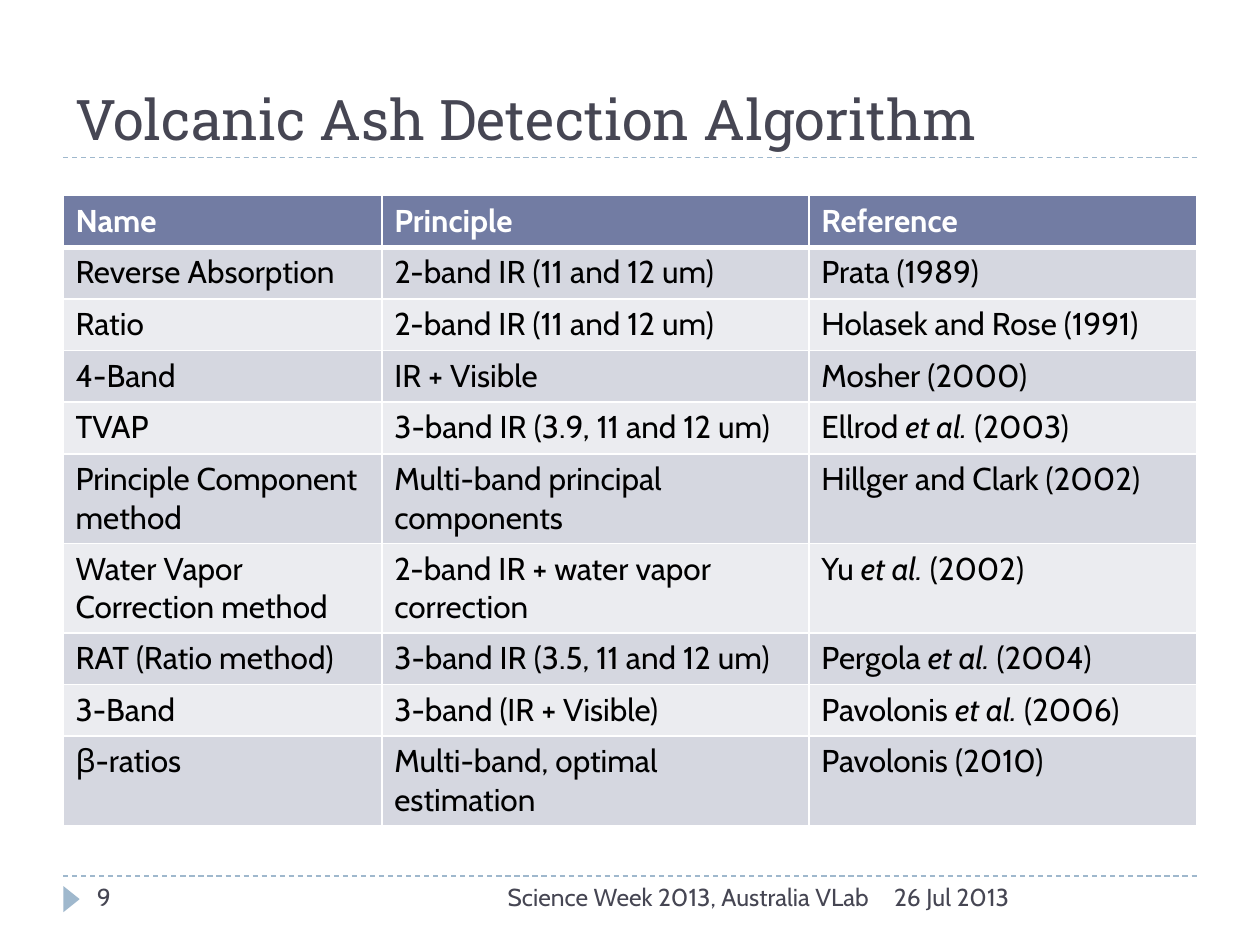
from dataclasses import dataclass

from lxml import etree
from pptx import Presentation
from pptx import util as u
from pptx.dml.color import RGBColor
from pptx.enum import dml, shapes, text
from pptx.oxml.ns import qn


@dataclass(frozen=True)
class Theme:
    heading_font: str = "Roboto Slab"
    body_font: str = "Cabin"
    ink: str = "464653"
    cell_ink: str = "000000"
    white: str = "FFFFFF"
    accent: str = "9FB8CD"
    header: str = "727CA3"
    bands: tuple = ("D5D7E0", "EBECF0")
    title_size: int = 32
    cell_size: int = 18
    footer_size: int = 14
    rule_width: float = 0.75
    grid_width: int = 1
    header_rule_width: int = 3


@dataclass(frozen=True)
class Box:
    left: float
    top: float
    width: float
    height: float

    def region(self, left, top, width, height):
        return Box(self.left + left * self.width, self.top + top * self.height,
                   width * self.width, height * self.height)

    def emu(self):
        return [u.Inches(n) for n in (self.left, self.top, self.width, self.height)]


THEME = Theme()
SLIDE = Box(0, 0, 10, 7.5)
MARGIN, CONTENT_WIDTH = 0.05, 0.9
COLUMN_WIDTHS = (2.53, 3.39, 3.08)
ROW_HEIGHT = 0.41
ET_AL = "et al."

ALGORITHMS = [
    ("Name", "Principle", "Reference"),
    ("Reverse Absorption", "2-band IR (11 and 12 um)", "Prata (1989)"),
    ("Ratio", "2-band IR (11 and 12 um)", "Holasek and Rose (1991)"),
    ("4-Band", "IR + Visible", "Mosher (2000)"),
    ("TVAP", "3-band IR (3.9, 11 and 12 um)", "Ellrod et al. (2003)"),
    ("Principle Component method", "Multi-band principal components",
     "Hillger and Clark (2002)"),
    ("Water Vapor Correction method", "2-band IR + water vapor correction",
     "Yu et al. (2002)"),
    ("RAT (Ratio method)", "3-band IR (3.5, 11 and 12 um)", "Pergola et al. (2004)"),
    ("3-Band", "3-band (IR + Visible)", "Pavolonis et al. (2006)"),
    ("β-ratios", "Multi-band, optimal estimation", "Pavolonis (2010)"),
]


def rgb(color):
    return RGBColor.from_string(color)


def set_font(paragraph, name, size, color, bold=False):
    font = paragraph.font
    font.name, font.size, font.bold = name, u.Pt(size), bold
    font.color.rgb = rgb(color)


def add_rule(slide, box):
    left, top, width, _ = box.emu()
    rule = slide.shapes.add_connector(shapes.MSO_CONNECTOR.STRAIGHT,
                                      left, top, left + width, top)
    rule.line.color.rgb = rgb(THEME.accent)
    rule.line.width = u.Pt(THEME.rule_width)
    rule.line.dash_style = dml.MSO_LINE.DASH
    etree.SubElement(rule._element.spPr, qn("a:effectLst"))


def add_heading(slide, box):
    add_rule(slide, box.region(0, 1, 1, 0))
    title = slide.shapes.title
    title.left, title.top, title.width, title.height = box.emu()
    frame = title.text_frame
    frame.text = "Volcanic Ash Detection Algorithm"
    frame.word_wrap = True
    frame.vertical_anchor = text.MSO_ANCHOR.BOTTOM
    paragraph = frame.paragraphs[0]
    paragraph.alignment = text.PP_ALIGN.LEFT
    set_font(paragraph, THEME.heading_font, THEME.title_size, THEME.ink)


def add_cell_borders(cell, bottom_width):
    properties = cell._tc.get_or_add_tcPr()
    widths = {"lnL": THEME.grid_width, "lnR": THEME.grid_width,
              "lnT": THEME.grid_width, "lnB": bottom_width}
    for side, width in widths.items():
        border = etree.SubElement(properties, qn(f"a:{side}"), w=str(u.Pt(width)))
        fill = etree.SubElement(border, qn("a:solidFill"))
        etree.SubElement(fill, qn("a:srgbClr"), val=THEME.white)


def write_cell(cell, wording, row):
    is_header = row == 0
    add_cell_borders(cell, THEME.header_rule_width if is_header else THEME.grid_width)
    cell.fill.solid()
    cell.fill.fore_color.rgb = rgb(THEME.header if is_header else THEME.bands[(row - 1) % 2])
    paragraph = cell.text_frame.paragraphs[0]
    for piece in filter(None, wording.partition(ET_AL)):
        run = paragraph.add_run()
        run.text = piece
        if piece == ET_AL:
            run.font.italic = True
    set_font(paragraph, THEME.body_font, THEME.cell_size,
             THEME.white if is_header else THEME.cell_ink, is_header)


def add_algorithms(slide, box):
    table = slide.shapes.add_table(len(ALGORITHMS), len(COLUMN_WIDTHS), *box.emu()).table
    for column, width in zip(table.columns, COLUMN_WIDTHS):
        column.width = u.Inches(width)
    for row, entries in enumerate(ALGORITHMS):
        table.rows[row].height = u.Inches(ROW_HEIGHT)
        for column, wording in enumerate(entries):
            write_cell(table.cell(row, column), wording, row)


def add_footer(slide, box):
    add_rule(slide, box.region(0, 0, 1, 0))
    marker = slide.shapes.add_shape(shapes.MSO_SHAPE.ISOSCELES_TRIANGLE,
                                    *box.region(-0.004, 0.3, 0.023, 0.325).emu())
    marker.rotation = 90
    marker.shadow.inherit = False
    marker.fill.solid()
    marker.fill.fore_color.rgb = rgb(THEME.accent)
    marker.line.fill.background()

    left, right = text.PP_ALIGN.LEFT, text.PP_ALIGN.RIGHT
    entries = [
        ("26 Jul 2013", 0.722, 0.278, left),
        ("Science Week 2013, Australia VLab", 0.297, 0.425, right),
        ("9", 0.019, 0.241, left),
    ]
    for wording, start, width, alignment in entries:
        frame = slide.shapes.add_textbox(*box.region(start, 0, width, 1).emu()).text_frame
        frame.word_wrap = True
        frame.text = wording
        paragraph = frame.paragraphs[0]
        paragraph.alignment = alignment
        set_font(paragraph, THEME.body_font, THEME.footer_size, THEME.ink)


def main():
    deck = Presentation()
    deck.slide_width, deck.slide_height = u.Inches(SLIDE.width), u.Inches(SLIDE.height)
    slide = deck.slides.add_slide(deck.slide_layouts.get_by_name("Title Only"))
    table_height = len(ALGORITHMS) * ROW_HEIGHT / SLIDE.height
    add_heading(slide, SLIDE.region(MARGIN, 0.023, CONTENT_WIDTH, 0.144))
    add_algorithms(slide, SLIDE.region(MARGIN, 0.207, CONTENT_WIDTH, table_height))
    add_footer(slide, SLIDE.region(MARGIN, 0.927, CONTENT_WIDTH, 0.053))
    deck.save("out.pptx")


if __name__ == "__main__":
    main()
